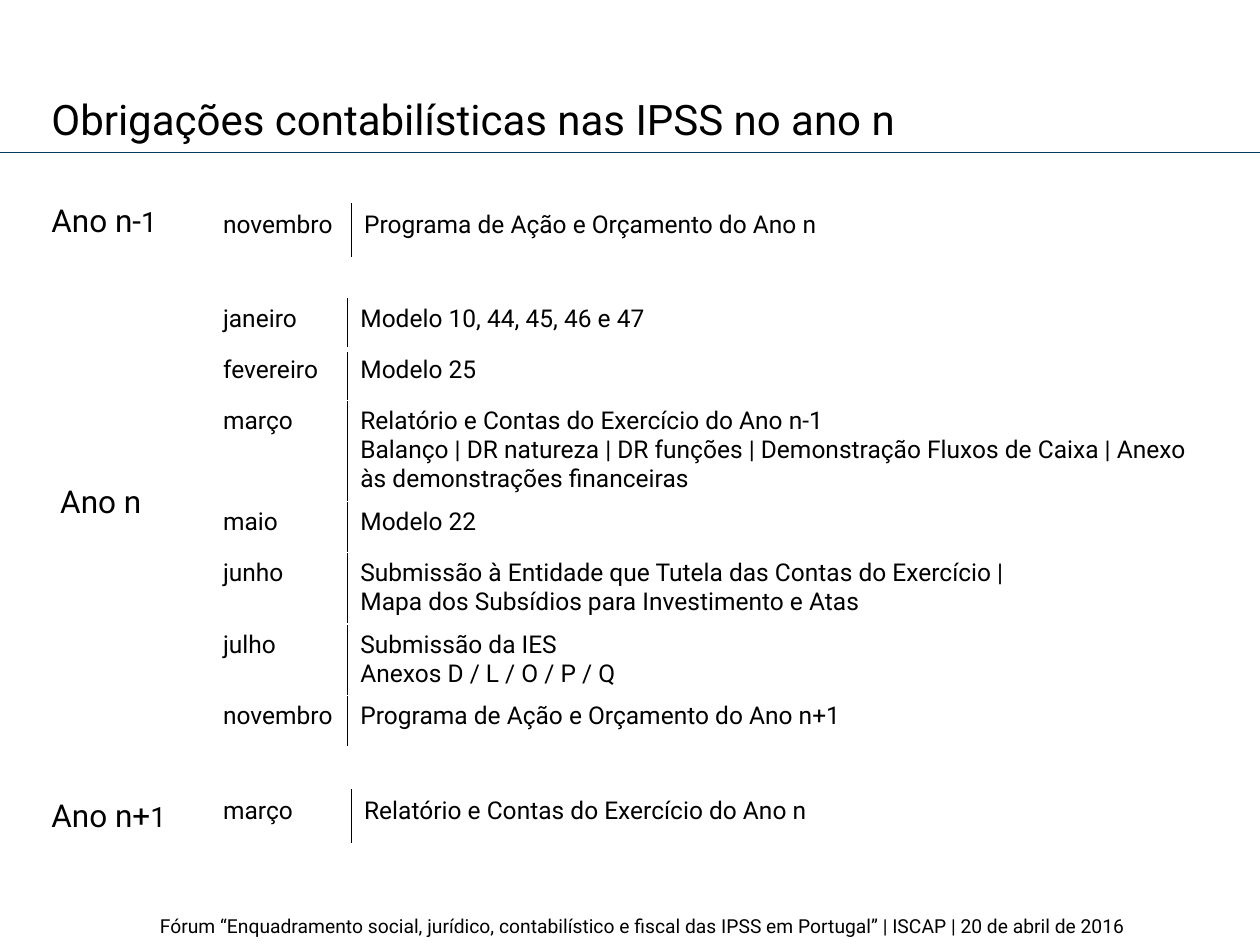
from lxml import etree
from pptx import Presentation, util as u
from pptx.dml.color import RGBColor
from pptx.enum import shapes, text
from pptx.oxml import ns

deck = Presentation()
deck.slide_width, deck.slide_height = u.Inches(10), u.Inches(7.5)
page = deck.slides.add_slide(deck.slide_layouts[6])

# Grid of 100 columns by 75 rows
COL, ROW = deck.slide_width / 100, deck.slide_height / 75
INK, PAPER, RULE = "000000", "FFFFFF", "003B5E"
color = RGBColor.from_string


def write(frame, paragraphs):
    """Each paragraph is a list of (wording, size) runs."""
    for i, runs in enumerate(paragraphs):
        line = frame.paragraphs[0] if i == 0 else frame.add_paragraph()
        for wording, size in runs:
            run = line.add_run()
            run.text = wording
            for key, value in {"name": "Roboto", "size": u.Pt(size)}.items():
                setattr(run.font, key, value)
            run.font.color.rgb = color(INK)


def edge(cell, side, hue, points):
    """Add one border; sides must come in the order L, R, T, B."""
    props = cell._tc.get_or_add_tcPr()
    border = etree.Element(ns.qn(f"a:ln{side}"), w=str(u.Pt(points)))
    fill = etree.SubElement(border, ns.qn("a:solidFill"))
    etree.SubElement(fill, ns.qn("a:srgbClr"), val=hue)
    props.insert("LRTB".index(side), border)


# Footer, title and year labels: column, row, width, height, wrap, runs
labels = [
    (11.7, 72.1, 96.2, 2.9, True,
     [("Fórum “Enquadramento social, jurídico, contabilístico e fiscal das "
       "IPSS em Portugal” | ISCAP | 20 de abril de 2016", 11)]),
    (3.1, 6.9, 69.7, 5, False, [("Obrigações contabilísticas nas IPSS no ano n", 24)]),
    (3.1, 15.5, 11, 4, True, [("Ano n-", 18), ("1", 16)]),
    (3.8, 37.8, 10.4, 4, True, [("Ano n", 18)]),
    (3.1, 62.7, 13.5, 4, True, [("Ano n+", 18), ("1", 16)]),
]
for left, top, width, height, wrap, runs in labels:
    label = page.shapes.add_textbox(*map(int, (left * COL, top * ROW, width * COL, height * ROW)))
    frame_format = {"word_wrap": wrap, "auto_size": text.MSO_AUTO_SIZE.SHAPE_TO_FIT_TEXT}
    for key, value in frame_format.items():
        setattr(label.text_frame, key, value)
    write(label.text_frame, [runs])

# Rule under the title
title_rule = page.shapes.add_connector(
    shapes.MSO_CONNECTOR.STRAIGHT, 0, int(12.1 * ROW), deck.slide_width, int(12.1 * ROW))
title_rule.line.color.rgb = color(RULE)
title_rule.line.width = u.Pt(0.5)
etree.SubElement(title_rule._element.spPr, ns.qn("a:effectLst"))

# Calendars: top row, column widths, months with their obligations
calendars = [
    (16.2, (11.2, 55.4), [("novembro", ["Programa de Ação e Orçamento do Ano n"])]),
    (23.7, (10.9, 67.9), [
        ("janeiro", ["Modelo 10, 44, 45, 46 e 47"]),
        ("fevereiro", ["Modelo 25"]),
        ("março", ["Relatório e Contas do Exercício do Ano n-1",
                   "Balanço | DR natureza | DR funções | Demonstração Fluxos de Caixa "
                   "| Anexo às demonstrações financeiras"]),
        ("maio", ["Modelo 22"]),
        ("junho", ["Submissão à Entidade que Tutela das Contas do Exercício |",
                   "Mapa dos Subsídios para Investimento e Atas"]),
        ("julho", ["Submissão da IES", "Anexos D / L / O / P / Q"]),
        ("novembro", ["Programa de Ação e Orçamento do Ano n+1"]),
    ]),
    (62.7, (11.2, 55.4), [("março", ["Relatório e Contas do Exercício do Ano n"])]),
]
for top, widths, months in calendars:
    calendar = page.shapes.add_table(
        len(months), 2, int(16.7 * COL), int(top * ROW),
        int(sum(widths) * COL), int(4.05 * ROW * len(months))).table
    for key in ("first_row", "horz_banding"):
        setattr(calendar, key, False)
    for column, width in zip(calendar.columns, widths):
        column.width = int(width * COL)
    for r, (month, duties) in enumerate(months):
        for c, lines in enumerate(([month], duties)):
            cell = calendar.cell(r, c)
            cell.fill.solid()
            cell.fill.fore_color.rgb = color(PAPER)
            write(cell.text_frame, [[(line, 14)] for line in lines])
            # Only the divider between month and duty is dark
            edge(cell, "L", INK if c else PAPER, 1)
            edge(cell, "R", PAPER if c else INK, 1)
            edge(cell, "T", PAPER, 3 if r == 1 else 1)
            edge(cell, "B", PAPER, 3 if r == 0 else 1)

deck.save("out.pptx")
